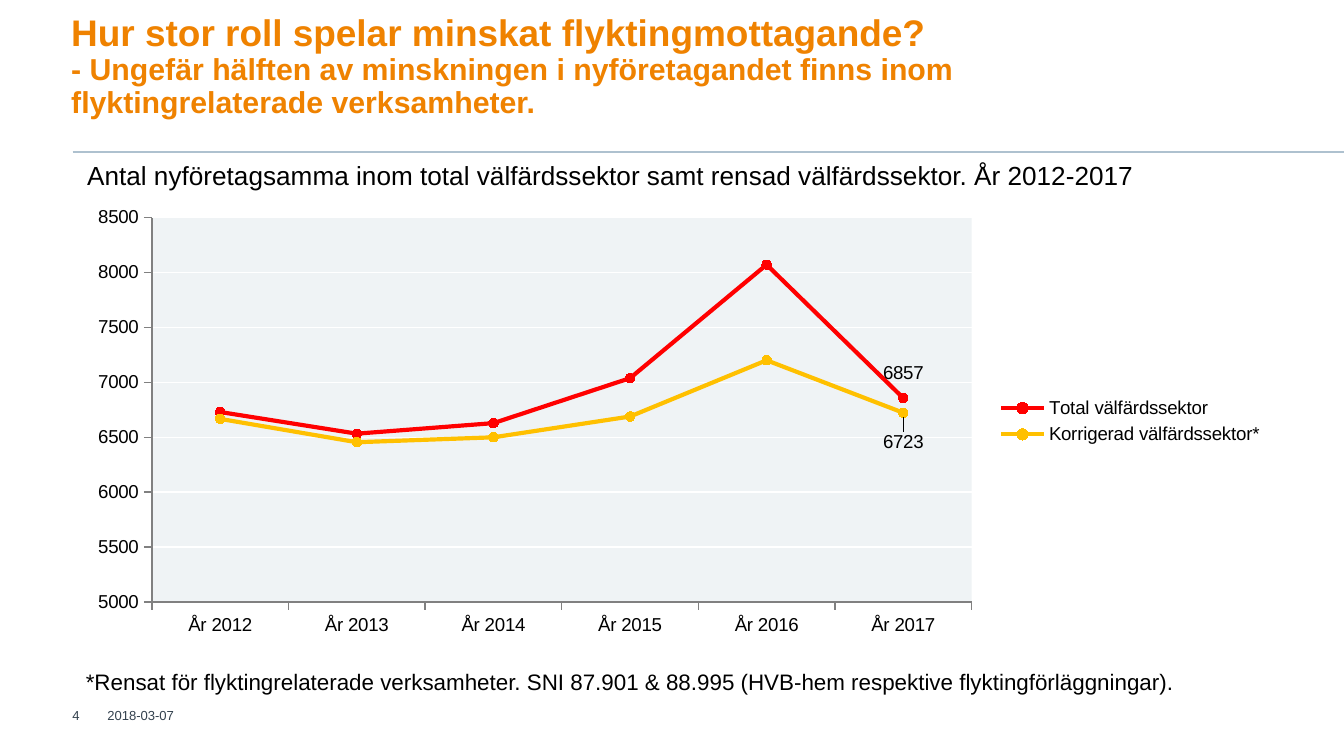
from lxml import etree
from pptx import Presentation
from pptx.chart.data import CategoryChartData
from pptx.dml.color import RGBColor
from pptx.enum.chart import XL_CHART_TYPE, XL_LABEL_POSITION, XL_LEGEND_POSITION, XL_MARKER_STYLE, XL_TICK_MARK
from pptx.enum.shapes import MSO_CONNECTOR
from pptx.enum.text import MSO_ANCHOR
from pptx.oxml import parse_xml
from pptx.oxml.ns import nsdecls, qn
from pptx.util import Inches, Pt

LINE_CHART = XL_CHART_TYPE.LINE_MARKERS
ABOVE, BELOW = XL_LABEL_POSITION.ABOVE, XL_LABEL_POSITION.BELOW
LEGEND_RIGHT = XL_LEGEND_POSITION.RIGHT
CIRCLE = XL_MARKER_STYLE.CIRCLE
TICK_OUTSIDE = XL_TICK_MARK.OUTSIDE
STRAIGHT = MSO_CONNECTOR.STRAIGHT
TOP, MIDDLE, BOTTOM = MSO_ANCHOR.TOP, MSO_ANCHOR.MIDDLE, MSO_ANCHOR.BOTTOM

WIDTH = 10
HEIGHT = WIDTH * 9 / 16
MARGIN = 0.54
CHART_BOX = (0.55, 1.47, 8.95, 3.33)
PLOT_BOX = (1.13, 1.62, 6.1, 2.86)
FONT = "Arial"
ORANGE, SLATE, RULE, AXIS = "EF8200", "33414E", "AEC1CF", "808080"
BLACK, WHITE, PLOT_FILL = "000000", "FFFFFF", "EFF3F5"
YEARS = range(2012, 2018)
SERIES = [
    ("Total välfärdssektor", (6730, 6532, 6628, 7038, 8072, 6857), "FF0000", ABOVE, -0.01),
    ("Korrigerad välfärdssektor*", (6667, 6454, 6499, 6689, 7201, 6723), "FFC000", BELOW, 0.02),
]


def color(value):
    """Turn a hex string into a colour."""
    return RGBColor.from_string(value)


def add_text(slide, box, lines, size=12, fill=BLACK, bold=False, anchor=TOP,
             insets=(0.1, 0.05, 0.1, 0.05), wrap=True, spacing=None):
    """Add a text box whose lines are strings or (string, size) pairs."""
    shape = slide.shapes.add_textbox(*map(Inches, box))
    frame = shape.text_frame
    frame.word_wrap = wrap
    frame.vertical_anchor = anchor
    frame.margin_left, frame.margin_top, frame.margin_right, frame.margin_bottom = map(Inches, insets)
    paragraph = frame.paragraphs[0]
    if spacing:
        paragraph.line_spacing = spacing
    for index, line in enumerate([lines] if isinstance(lines, str) else lines):
        text, points = (line, size) if isinstance(line, str) else line
        if index:
            paragraph.add_line_break()
        run = paragraph.add_run()
        run.text = text
        run.font.name, run.font.size, run.font.bold = FONT, Pt(points), bold
        run.font.color.rgb = color(fill)


def add_rule(slide, top):
    """Draw the line below the title, from the margin to the right edge."""
    line = slide.shapes.add_connector(STRAIGHT, Inches(MARGIN), Inches(top), Inches(WIDTH), Inches(top))
    line.line.color.rgb = color(RULE)
    line.line.width = Pt(1)
    etree.SubElement(line._element.spPr, qn("a:effectLst"))


def manual_layout(**settings):
    """Make a chart layout element from its settings, in schema order."""
    children = "".join(f'<c:{tag} val="{value}"/>' for tag, value in settings.items())
    return parse_xml(f'<c:layout {nsdecls("c")}><c:manualLayout>{children}</c:manualLayout></c:layout>')


def style_plot_area(chart):
    """Place the inner plot area within the chart and fill it."""
    area = chart._chartSpace.chart.plotArea
    for layout in area.findall(qn("c:layout")):
        area.remove(layout)
    chart_left, chart_top, chart_width, chart_height = CHART_BOX
    left, top, width, height = PLOT_BOX
    area.insert(0, manual_layout(
        layoutTarget="inner", xMode="edge", yMode="edge",
        x=(left - chart_left) / chart_width, y=(top - chart_top) / chart_height,
        w=width / chart_width, h=height / chart_height))
    area.append(parse_xml(
        f'<c:spPr {nsdecls("c", "a")}><a:solidFill><a:srgbClr val="{PLOT_FILL}"/></a:solidFill></c:spPr>'))


def style_axes(chart):
    """Set the scale, ticks, axis lines and gridlines."""
    values = chart.value_axis
    values.minimum_scale, values.maximum_scale, values.major_unit = 5000, 8500, 500
    gridline = values.major_gridlines.format.line
    gridline.color.rgb = color(WHITE)
    gridline.width = Pt(0.75)
    for axis in (values, chart.category_axis):
        axis.major_tick_mark = TICK_OUTSIDE
        axis.format.line.color.rgb = color(AXIS)


def style_series(series, fill, label_position, label_shift):
    """Colour one line and label its last point, moved by a share of the chart height."""
    series.smooth = False
    series.format.line.color.rgb = color(fill)
    series.format.line.width = Pt(2.25)
    marker = series.marker
    marker.style, marker.size = CIRCLE, 5
    marker.format.fill.solid()
    marker.format.fill.fore_color.rgb = color(fill)
    marker.format.line.color.rgb = color(fill)
    series.points[len(YEARS) - 1].data_label.position = label_position
    series.data_labels.show_value = False
    for label in series._element.iter(qn("c:dLbl")):
        label.insert(1, manual_layout(x=0, y=label_shift))


def add_line_chart(slide):
    """Add the chart of both sectors by year."""
    data = CategoryChartData()
    data.categories = [f"År {year}" for year in YEARS]
    for name, values, *_ in SERIES:
        data.add_series(name, values)
    chart = slide.shapes.add_chart(LINE_CHART, *map(Inches, CHART_BOX), data).chart
    chart.has_title = False
    chart.font.name, chart.font.size = FONT, Pt(10)
    chart.font.color.rgb = color(BLACK)
    chart.has_legend = True
    chart.legend.position = LEGEND_RIGHT
    chart.legend.include_in_layout = False
    chart.plots[0].vary_by_categories = False
    style_axes(chart)
    style_plot_area(chart)
    for series, (_, _, *style) in zip(chart.plots[0].series, SERIES):
        style_series(series, *style)


def main():
    """Build and save the slide."""
    presentation = Presentation()
    presentation.slide_width, presentation.slide_height = Inches(WIDTH), Inches(HEIGHT)
    slide = presentation.slides.add_slide(presentation.slide_layouts[6])
    add_rule(slide, 1.13)
    add_text(slide, (MARGIN - 0.01, 0.27, 7.41, 0.67), [
        ("Hur stor roll spelar minskat flyktingmottagande?", 19.8),
        ("- Ungefär hälften av minskningen i nyföretagandet finns inom flyktingrelaterade verksamheter.", 16.2),
    ], fill=ORANGE, bold=True, anchor=BOTTOM, insets=(0, 0, 0.1, 0.05), spacing=0.9)
    add_text(slide, (0.8, 5.26, 0.6, 0.13), "2018-03-07", size=7, fill=SLATE,
             anchor=MIDDLE, insets=(0, 0.05, 0, 0.05))
    add_text(slide, (0.44, 5.26, 0.35, 0.13), "4", size=7, fill=SLATE, anchor=MIDDLE)
    add_line_chart(slide)
    add_text(slide, (MARGIN, 4.92, 8.32, 0.3),
             "*Rensat för flyktingrelaterade verksamheter. SNI 87.901 & 88.995 "
             "(HVB-hem respektive flyktingförläggningar).", wrap=False)
    add_text(slide, (0.55, 1.14, 8.02, 0.34),
             "Antal nyföretagsamma inom total välfärdssektor samt rensad välfärdssektor. År 2012-2017",
             size=14, wrap=False)
    presentation.save("out.pptx")


if __name__ == "__main__":
    main()
